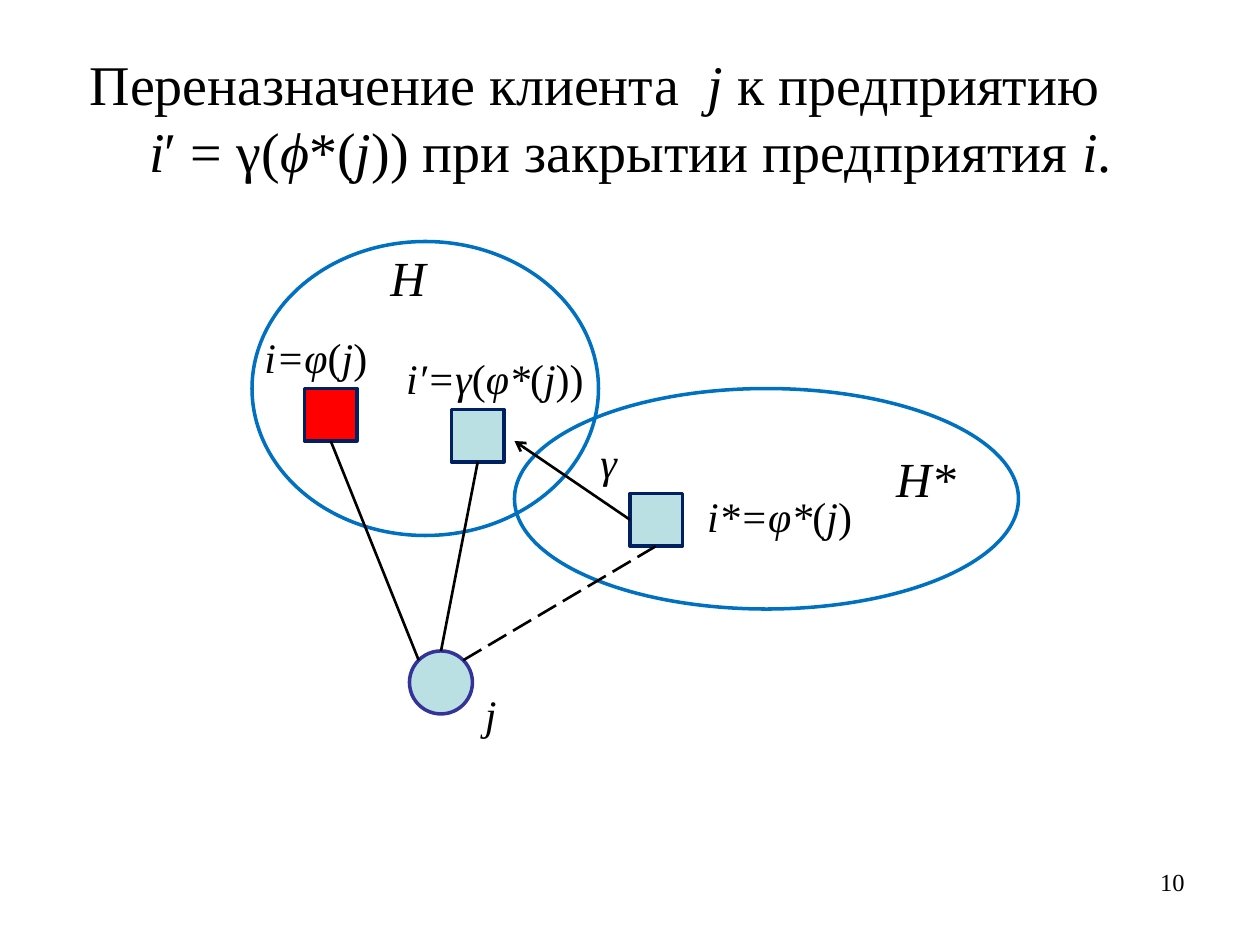
from lxml.etree import SubElement
from pptx import Presentation
from pptx.dml.color import RGBColor
from pptx.enum.dml import MSO_LINE
from pptx.enum.shapes import MSO_CONNECTOR, MSO_SHAPE
from pptx.enum.text import MSO_ANCHOR, MSO_AUTO_SIZE, PP_ALIGN
from pptx.oxml.ns import qn
from pptx.util import Pt

FONT = "Times New Roman"
BLACK, NAVY, PALE = "000000", "002060", "BBE0E3"


def color(code):
    """Turn a hex string into a colour."""
    return RGBColor.from_string(code)


def write(para, text, size):
    """Add runs to a paragraph, with italics between underscores."""
    for num, part in enumerate(text.split("_")):
        if part:
            run = para.add_run()
            run.text = part
            run.font.name, run.font.size = FONT, Pt(size)
            run.font.italic = num % 2 == 1
            run.font.color.rgb = color(BLACK)


def label(slide, text, size, x, y, wide, high):
    """Place a one-line text box and return its frame."""
    frame = slide.shapes.add_textbox(Pt(x), Pt(y), Pt(wide), Pt(high)).text_frame
    frame.word_wrap = False
    frame.auto_size = MSO_AUTO_SIZE.SHAPE_TO_FIT_TEXT
    write(frame.paragraphs[0], text, size)
    return frame


def node(slide, kind, x, y, wide, high, edge, fill=None):
    """Draw an outlined shape, hollow unless a fill is given."""
    shape = slide.shapes.add_shape(kind, Pt(x), Pt(y), Pt(wide), Pt(high))
    shape.shadow.inherit = False
    if fill:
        shape.fill.solid()
        shape.fill.fore_color.rgb = color(fill)
    else:
        shape.fill.background()
    shape.line.color.rgb = color(edge)
    shape.line.width = Pt(2)


def link(slide, x, y, start, end, dash=None, arrow=False):
    """Join two points given relative to x and y."""
    line = slide.shapes.add_connector(
        MSO_CONNECTOR.STRAIGHT,
        Pt(x + start[0]), Pt(y + start[1]), Pt(x + end[0]), Pt(y + end[1]))
    line.line.color.rgb = color(BLACK)
    line.line.width = Pt(1.5)
    if dash:
        line.line.dash_style = dash
    if arrow:
        SubElement(line.line._get_or_add_ln(), qn("a:tailEnd"), type="arrow")
    SubElement(line._element.spPr, qn("a:effectLst"))


def heading(slide, x, y, wide, high):
    """Fill the title with two lines and a hanging indent."""
    title = slide.shapes.title
    title.left, title.top, title.width, title.height = map(Pt, (x, y, wide, high))
    frame = title.text_frame
    frame.word_wrap = True
    frame.auto_size = MSO_AUTO_SIZE.NONE
    frame.vertical_anchor = MSO_ANCHOR.MIDDLE
    para = frame.paragraphs[0]
    para.alignment = PP_ALIGN.LEFT
    props = para._p.get_or_add_pPr()
    props.set("marL", str(Pt(42)))
    props.set("indent", str(Pt(-34)))
    write(para, "Переназначение клиента  _j_ к предприятию", 32)
    para.add_line_break()
    write(para, "_i_′ = γ(_ϕ_*(_j_)) при закрытии предприятия _i_.", 32)


def graph(slide, x, y):
    """Draw both sets, their sites, the client and the links."""
    for left, top, wide, high in ((0, 0, 198, 168), (150, 84, 288, 126)):
        node(slide, MSO_SHAPE.OVAL, x + left, y + top, wide, high, "0070C0")

    rad, mid = 18, (108, 252)
    node(slide, MSO_SHAPE.FLOWCHART_CONNECTOR, x + mid[0] - rad, y + mid[1] - rad,
         2 * rad, 2 * rad, "333399", PALE)

    side, diag = 30, rad * 0.5 ** 0.5
    sites = (
        (30, 84, "FF0000", -diag, -diag, None),
        (114, 96, PALE, 0, -rad, None),
        (216, 144, PALE, diag, -diag, MSO_LINE.LONG_DASH),
    )
    for left, top, fill, across, down, dash in sites:
        node(slide, MSO_SHAPE.FLOWCHART_PROCESS, x + left, y + top,
             side, side, NAVY, fill)
        link(slide, x, y, (mid[0] + across, mid[1] + down),
             (left + side / 2, top + side), dash)
    link(slide, x, y, (216, 159), (150, 114), arrow=True)

    labels = (
        ("_H_", 28, 72, 0, 35),
        ("_H*_", 28, 361, 115, 49),
        ("_γ_", 24, 192, 108, 24.5),
        ("_i*=φ*_(_j_)", 24, 253, 138.5, 98),
        ("_j_", 24, 126, 252, 21),
        ("_i=φ_(_j_)", 24, 0, 48, 74),
        ("_i′=γ_(_φ*_(_j_))", 24, 81, 60, 117),
    )
    for text, size, left, top, wide in labels:
        label(slide, text, size, x + left, y + top, wide, size * 1.2 + 7.2)


def number(slide, x, y, wide, high):
    """Place the page number at the right of its box."""
    frame = label(slide, "10", 14, x, y, wide, high)
    frame.word_wrap = True
    frame.auto_size = MSO_AUTO_SIZE.NONE
    frame.paragraphs[0].alignment = PP_ALIGN.RIGHT


def main():
    """Build and save the slide."""
    deck = Presentation()
    deck.slide_width, deck.slide_height = Pt(720), Pt(540)
    slide = deck.slides.add_slide(deck.slide_layouts[5])
    heading(slide, 36, 21.6, 648, 90)
    graph(slide, 144, 138)
    number(slide, 516, 492, 168, 37.5)
    deck.save("out.pptx")


if __name__ == "__main__":
    main()
